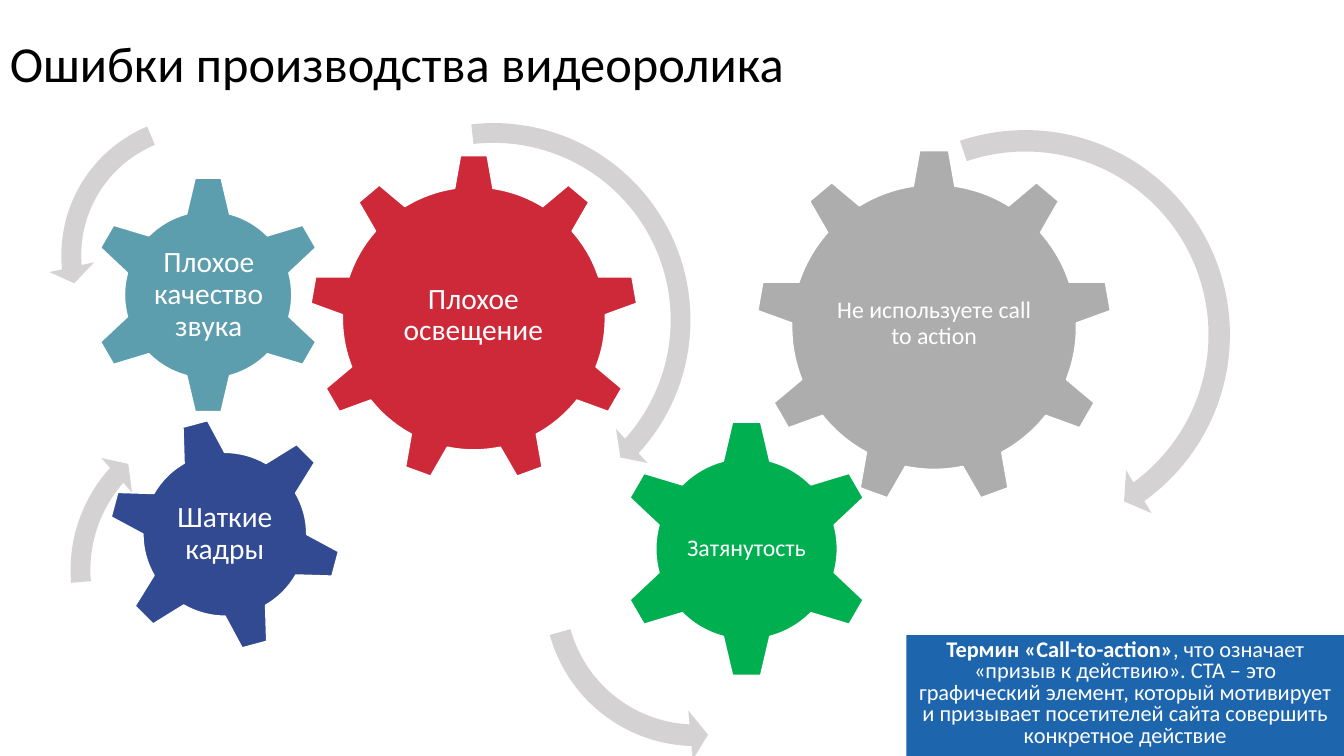
from pptx import Presentation
from pptx.dml.color import RGBColor
from pptx.enum.shapes import MSO_SHAPE as SHAPE
from pptx.enum.text import MSO_ANCHOR as ANCHOR, MSO_AUTO_SIZE as AUTO_SIZE, PP_ALIGN as ALIGN
from pptx.util import Pt

PX = 9144  # 100 px to the inch
FONT = "Calibri"
COLORS = {
    "black": "000000",
    "white": "FFFFFF",
    "red": "CE2939",
    "teal": "5C9DAE",
    "navy": "324A92",
    "gray": "ADADAD",
    "green": "00B050",
    "arrow": "D4D2D3",
    "blue": "1D65AD",
}
LEFT_ARC = (0.065, 4.3, 104.891, 148.378, 0.075)


def color(name):
    return RGBColor.from_string(COLORS[name])


def emu(box):
    return [length * PX for length in box]


def add_filled_shape(slide, kind, box, fill, outline=None, rotation=0):
    shape = slide.shapes.add_shape(kind, *emu(box))
    shape.shadow.inherit = False
    shape.rotation = rotation
    shape.fill.solid()
    shape.fill.fore_color.rgb = color(fill)
    if outline:
        shape.line.color.rgb = color(outline)
        shape.line.width = Pt(1)
    else:
        shape.line.fill.background()
    return shape


def set_font(paragraph, size, name):
    paragraph.font.name = FONT
    paragraph.font.size = Pt(size)
    paragraph.font.color.rgb = color(name)


def add_title(slide, box, text):
    frame = slide.shapes.add_textbox(*emu(box)).text_frame
    frame.word_wrap = True
    frame.auto_size = AUTO_SIZE.SHAPE_TO_FIT_TEXT
    paragraph = frame.paragraphs[0]
    paragraph.text = text
    set_font(paragraph, 36, "black")


def add_gear(slide, kind, box, fill, text, size, label, rotation=0):
    """Draw a square gear; label is the text's offset and size inside it."""
    left, top, side = box
    add_filled_shape(slide, kind, (left, top, side, side), fill, "white", rotation)
    label_left, label_top, width, height = label
    frame = slide.shapes.add_textbox(
        *emu((left + label_left, top + label_top, width, height))).text_frame
    frame.word_wrap = True
    frame.vertical_anchor = ANCHOR.MIDDLE
    frame.margin_left = frame.margin_right = 3 * PX
    frame.margin_top = frame.margin_bottom = 3 * PX
    paragraph = frame.paragraphs[0]
    paragraph.text = text
    paragraph.alignment = ALIGN.CENTER
    paragraph.line_spacing = 0.9
    set_font(paragraph, size, "white")


def add_arc_arrow(slide, kind, box, adjustments, rotation=0):
    left, top, side = box
    arrow = add_filled_shape(slide, kind, (left, top, side, side), "arrow", rotation=rotation)
    for index, value in enumerate(adjustments):
        arrow.adjustments[index] = value


def add_filming_gears(slide, left, top):
    add_gear(slide, SHAPE.GEAR_9, (left + 259, top + 51, 326), "red",
             "Плохое освещение", 21, (65, 76, 195, 168))
    add_gear(slide, SHAPE.GEAR_6, (left + 40, top + 72, 237), "teal",
             "Плохое качество звука", 21, (60, 60, 118, 117))
    add_gear(slide, SHAPE.GEAR_6, (left + 59, top + 312, 232), "navy",
             "Шаткие кадры", 21, (51, 51, 130, 130), 345)
    add_arc_arrow(slide, SHAPE.CIRCULAR_ARROW, (left + 233, top + 7, 417),
                  (0.047, 2.99, 25.393, 158.123, 0.055))
    add_arc_arrow(slide, SHAPE.LEFT_CIRCULAR_ARROW, (left, top, 303), LEFT_ARC)
    add_arc_arrow(slide, SHAPE.CIRCULAR_ARROW, (left + 9, top + 300, 327),
                  (0.06, 3.941, 133.138, 105.082, 0.07))


def add_content_gears(slide, left, top):
    add_gear(slide, SHAPE.GEAR_9, (left + 224, top + 33, 353), "gray",
             "Не используете call to action", 17, (71, 83, 211, 181))
    add_gear(slide, SHAPE.GEAR_6, (left + 86, top + 301, 257), "green",
             "Затянутость", 17, (65, 65, 127, 127))
    add_arc_arrow(slide, SHAPE.CIRCULAR_ARROW, (left + 274, top, 434),
                  (0.049, 3.126, 32.498, 150.815, 0.057))
    add_arc_arrow(slide, SHAPE.LEFT_CIRCULAR_ARROW, (left, top + 311, 328), LEFT_ARC, 277.3)


def add_definition(slide, box, term, meaning):
    frame = add_filled_shape(slide, SHAPE.RECTANGLE, box, "blue").text_frame
    frame.word_wrap = True
    frame.vertical_anchor = ANCHOR.TOP
    paragraph = frame.paragraphs[0]
    paragraph.alignment = ALIGN.CENTER
    paragraph.line_spacing = 0.8
    set_font(paragraph, 16, "white")
    term_run = paragraph.add_run()
    term_run.text = term
    term_run.font.bold = True
    paragraph.add_run().text = meaning


def main():
    presentation = Presentation()
    presentation.slide_width, presentation.slide_height = emu((1333, 750))
    slide = presentation.slides.add_slide(presentation.slide_layouts[6])
    add_title(slide, (0, 27, 1152, 71), "Ошибки производства видеоролика")
    add_filming_gears(slide, 48, 102)
    add_content_gears(slide, 526, 115)
    add_definition(
        slide, (899, 630, 434, 120), "Термин «Call-to-action»",
        ", что означает «призыв к действию». CTA – это графический элемент, который "
        "мотивирует и призывает посетителей сайта совершить конкретное действие")
    presentation.save("out.pptx")


if __name__ == "__main__":
    main()
